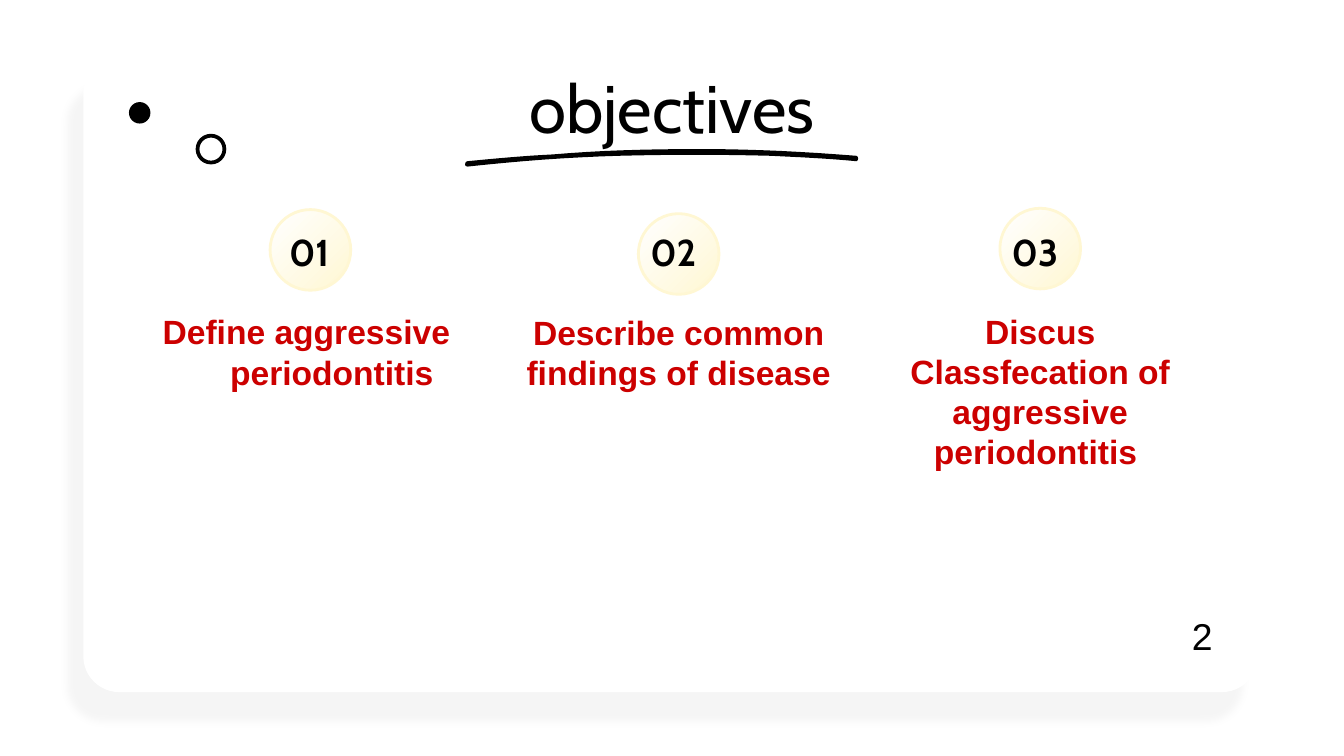
from lxml import etree
from pptx import Presentation
from pptx.dml.color import RGBColor
from pptx.enum import shapes, text
from pptx.oxml import ns
from pptx.util import Inches, Pt

INK, CREAM, RED, WHITE = "000000", "FFF7D3", "CC0000", "FFFFFF"

# Number, number left, circle left and top, text, text box, hanging indent
OBJECTIVES = [
    ("01", 2.09, (2.01, 1.56), "Define aggressive periodontitis",
     (1.07, 2.41, 2.3, 0.41), True),
    ("02", 4.8, (4.75, 1.59), "Describe common findings of disease",
     (3.88, 2.32, 2.34, 0.55), False),
    ("03", 7.49, (7.44, 1.55), "Discus Classfecation of aggressive periodontitis ",
     (6.59, 2.31, 2.3, 0.55), False),
]

# Cubic curves of the brush stroke: two control points and an end point each
STROKE_START = (5.16, 1.11)
STROKE_CURVES = [
    ((4.81, 1.11), (4.46, 1.12), (4.11, 1.15)),
    ((3.9, 1.16), (3.69, 1.18), (3.48, 1.2)),
    ((3.46, 1.2), (3.45, 1.24), (3.48, 1.24)),
    ((3.85, 1.2), (4.23, 1.17), (4.61, 1.16)),
    ((4.98, 1.15), (5.36, 1.15), (5.73, 1.16)),
    ((5.95, 1.17), (6.16, 1.18), (6.37, 1.2)),
    ((6.39, 1.2), (6.39, 1.16), (6.37, 1.16)),
    ((5.99, 1.13), (5.62, 1.11), (5.24, 1.11)),
]


def color(hex_value):
    return RGBColor.from_string(hex_value)


def add_xml(parent, tag, **attributes):
    return etree.SubElement(parent, ns.qn(tag), attributes)


def style(shape, fill=None, line=None, width=1.5):
    shape.shadow.inherit = False
    if fill:
        shape.fill.solid()
        shape.fill.fore_color.rgb = color(fill)
    else:
        shape.fill.background()
    if line:
        shape.line.color.rgb = color(line)
        shape.line.width = Pt(width)
    else:
        shape.line.fill.background()


def add_shape(slide, kind, box, **look):
    shape = slide.shapes.add_shape(kind, *map(Inches, box))
    style(shape, **look)
    return shape


def add_panel(slide, box, corner):
    panel = add_shape(slide, shapes.MSO_SHAPE.ROUNDED_RECTANGLE, box, fill=WHITE)
    panel.adjustments[0] = corner
    return panel


def add_panels(slide):
    """A tilted translucent sheet behind a card with a soft shadow."""
    sheet = add_panel(slide, (0.53, 0.38, 8.87, 4.79), 0.035)
    sheet.rotation = 357.1
    sheet_color = sheet._element.spPr.find(".//" + ns.qn("a:srgbClr"))
    add_xml(sheet_color, "a:alpha", val="48000")

    card = add_panel(slide, (0.62, 0.43, 8.74, 4.72), 0.057)
    effects = card._element.spPr.find(ns.qn("a:effectLst"))
    shadow = add_xml(effects, "a:outerShdw", blurRad=str(Pt(4.5)), dist=str(Pt(18)),
                     dir=str(118 * 60000), algn="bl", rotWithShape="0")
    add_xml(add_xml(shadow, "a:srgbClr", val=INK), "a:alpha", val="4000")


def add_badge(slide, left, top):
    """Circle shaded from white at the top left to cream."""
    badge = add_shape(slide, shapes.MSO_SHAPE.OVAL, (left, top, 0.6, 0.6), line=CREAM)
    badge.fill.gradient()
    for stop, position, hex_value in zip(badge.fill.gradient_stops, (0, 1), (WHITE, CREAM)):
        stop.position = position
        stop.color.rgb = color(hex_value)
    gradient = badge._element.spPr.find(ns.qn("a:gradFill"))
    gradient.remove(gradient.find(ns.qn("a:lin")))
    radial = add_xml(gradient, "a:path", path="circle")
    add_xml(radial, "a:fillToRect", r="100000", b="100000")


def add_text(slide, box, words, size, font="Arial", hex_value=INK, bold=False,
             align=text.PP_ALIGN.CENTER, anchor=text.MSO_ANCHOR.TOP, margin=0):
    frame = slide.shapes.add_textbox(*map(Inches, box)).text_frame
    frame.word_wrap = True
    frame.vertical_anchor = anchor
    frame.margin_left = frame.margin_right = Inches(margin)
    frame.margin_top = frame.margin_bottom = Inches(margin / 2)
    paragraph = frame.paragraphs[0]
    paragraph.alignment = align
    run = paragraph.add_run()
    run.text = words
    run.font.size = Pt(size)
    run.font.name = font
    run.font.bold = bold
    run.font.color.rgb = color(hex_value)
    return paragraph


def add_objective(slide, number, number_left, badge_at, words, box, hanging):
    add_badge(slide, *badge_at)
    add_text(slide, (number_left, 1.66, 0.42, 0.42), number, 20, "Cabin", bold=True,
             anchor=text.MSO_ANCHOR.MIDDLE)
    anchor = text.MSO_ANCHOR.MIDDLE if hanging else text.MSO_ANCHOR.TOP
    paragraph = add_text(slide, box, words, 18, hex_value=RED, bold=True, anchor=anchor)
    if hanging:
        properties = paragraph._p.get_or_add_pPr()
        properties.set("marL", str(Inches(0.5)))
        properties.set("indent", str(Inches(-0.38)))


def curve_points(start, first, second, end, steps=8):
    for step in range(1, steps + 1):
        t = step / steps
        weights = ((1 - t) ** 3, 3 * t * (1 - t) ** 2, 3 * t * t * (1 - t), t ** 3)
        corners = (start, first, second, end)
        yield tuple(Inches(sum(w * corner[axis] for w, corner in zip(weights, corners)))
                    for axis in (0, 1))


def add_brush_stroke(slide):
    points, start = [], STROKE_START
    for curve in STROKE_CURVES:
        points.extend(curve_points(start, *curve))
        start = curve[-1]
    builder = slide.shapes.build_freeform(*map(Inches, STROKE_START))
    builder.add_line_segments(points, close=True)
    style(builder.convert_to_shape(), fill=INK)


def main():
    presentation = Presentation()
    presentation.slide_width = Inches(10)
    presentation.slide_height = Inches(10) * 9 // 16
    slide = presentation.slides.add_slide(presentation.slide_layouts[6])

    add_panels(slide)
    add_text(slide, (0.78, 0.49, 8.44, 0.63), "objectives", 36, "Cabin")
    add_brush_stroke(slide)
    for objective in OBJECTIVES:
        add_objective(slide, *objective)
    add_shape(slide, shapes.MSO_SHAPE.OVAL, (1.47, 1.01, 0.2, 0.2), line=INK, width=2)
    add_shape(slide, shapes.MSO_SHAPE.OVAL, (0.96, 0.76, 0.16, 0.16), fill=INK)
    add_text(slide, (8.77, 4.51, 0.45, 0.44), "2", 20,
             align=text.PP_ALIGN.LEFT, margin=0.1)

    presentation.save("out.pptx")


if __name__ == "__main__":
    main()
